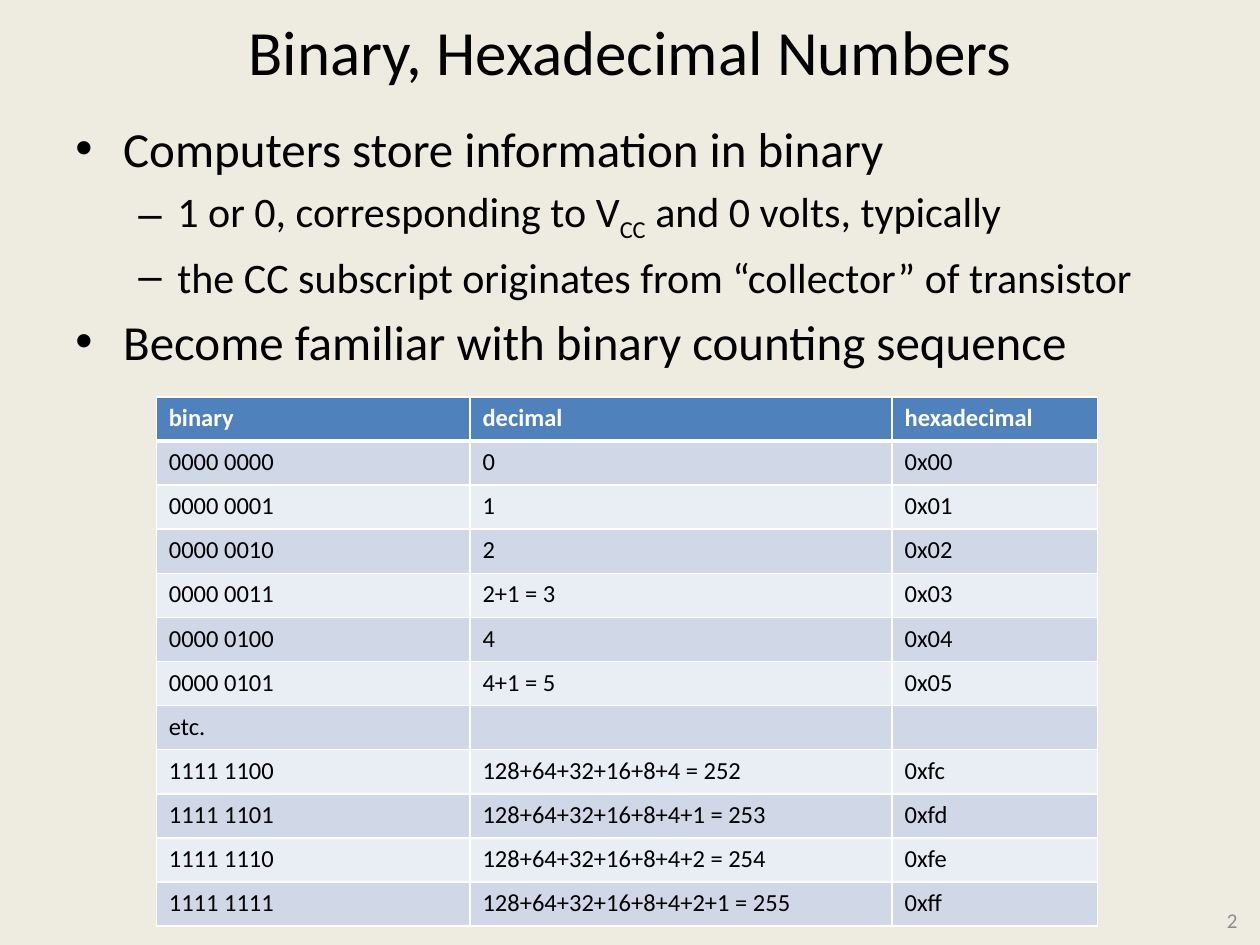
from lxml import etree
from pptx import Presentation
from pptx.dml.color import RGBColor
from pptx.enum.text import MSO_ANCHOR, PP_ALIGN
from pptx.oxml.ns import qn
from pptx.util import Inches, Pt

LEFT, CENTER, RIGHT = PP_ALIGN.LEFT, PP_ALIGN.CENTER, PP_ALIGN.RIGHT
TOP, MIDDLE = MSO_ANCHOR.TOP, MSO_ANCHOR.MIDDLE

FONT = "Calibri"
BLACK, WHITE, GREY = "000000", "FFFFFF", "8C8C8C"
PAPER, HEADER_BLUE = "EEECE1", "4F81BD"
BANDS = ("D0D8E8", "E9EDF4")

# Per outline level: bullet, text indent, hanging indent, text size
LEVELS = (("•", 0.38, 0.38, 28), ("–", 0.81, 0.31, 24))
# Each point is a level and its pieces of text; every second piece is a subscript
POINTS = (
    (0, ["Computers store information in binary"]),
    (1, ["1 or 0, corresponding to V", "CC", " and 0 volts, typically"]),
    (1, ["the CC subscript originates from “collector” of transistor"]),
    (0, ["Become familiar with binary counting sequence"]),
)
COLUMN_WIDTHS = (2.49, 3.35, 1.63)
ROW_HEIGHT = 0.35


def color(hex_code):
    return RGBColor.from_string(hex_code)


def style_span(span, size, hex_code, bold=False):
    span.font.name = FONT
    span.font.size = Pt(size)
    span.font.bold = bold
    span.font.color.rgb = color(hex_code)


def write_line(shape, text, size, hex_code, align):
    """Fill a shape with one vertically centred line."""
    frame = shape.text_frame
    frame.word_wrap = True
    frame.vertical_anchor = MIDDLE
    frame.text = text
    para = frame.paragraphs[0]
    para.alignment = align
    style_span(para.runs[0], size, hex_code)


def set_bullet(para, char, indent, hanging):
    props = para._p.get_or_add_pPr()
    props.set("marL", str(Inches(indent)))
    props.set("indent", str(-Inches(hanging)))
    etree.SubElement(props, qn("a:buFont"), typeface="Arial")
    etree.SubElement(props, qn("a:buChar"), char=char)


def add_title(page, box):
    title = page.shapes.title
    title.left, title.top, title.width, title.height = map(Inches, box)
    write_line(title, "Binary, Hexadecimal Numbers", 36, BLACK, CENTER)


def add_points(page, box):
    frame = page.shapes.add_textbox(*map(Inches, box)).text_frame
    frame.word_wrap = True
    frame.vertical_anchor = TOP
    for index, (level, pieces) in enumerate(POINTS):
        para = frame.add_paragraph() if index else frame.paragraphs[0]
        char, indent, hanging, size = LEVELS[level]
        para.level = level
        para.alignment = LEFT
        para.space_before = Pt(size * 0.2)
        set_bullet(para, char, indent, hanging)
        for position, piece in enumerate(pieces):
            span = para.add_run()
            span.text = piece
            style_span(span, size, BLACK)
            if position % 2:
                span.font._element.set("baseline", "-25000")


def number_row(number):
    """Return a number in binary, as a sum of powers of two, and in hexadecimal."""
    bits = f"{number:08b}"
    powers = [str(2 ** (7 - place)) for place, bit in enumerate(bits) if bit == "1"]
    decimal = f"{'+'.join(powers)} = {number}" if len(powers) > 1 else str(number)
    return f"{bits[:4]} {bits[4:]}", decimal, f"0x{number:02x}"


def set_borders(cell, top, bottom):
    """Draw white borders; top and bottom are widths in points."""
    props = cell._tc.get_or_add_tcPr()
    for side, width in (("L", 1), ("R", 1), ("T", top), ("B", bottom)):
        line = etree.SubElement(props, qn(f"a:ln{side}"), w=str(Pt(width)))
        fill = etree.SubElement(line, qn("a:solidFill"))
        etree.SubElement(fill, qn("a:srgbClr"), val=WHITE)


def style_cell(cell, text, row):
    header = row == 0
    set_borders(cell, 3 if row == 1 else 1, 3 if header else 1)
    cell.fill.solid()
    cell.fill.fore_color.rgb = color(HEADER_BLUE if header else BANDS[(row - 1) % 2])
    cell.text = text
    para = cell.text_frame.paragraphs[0]
    for span in para.runs:
        style_span(span, 14, WHITE if header else BLACK, header)
    if not text:
        etree.SubElement(para._p, qn("a:endParaRPr"), sz="1400")


def add_number_table(page, left, top):
    rows = [
        ("binary", "decimal", "hexadecimal"),
        *map(number_row, range(6)),
        ("etc.", "", ""),
        *map(number_row, range(252, 256)),
    ]
    box = (left, top, sum(COLUMN_WIDTHS), ROW_HEIGHT * len(rows))
    table = page.shapes.add_table(len(rows), len(COLUMN_WIDTHS), *map(Inches, box)).table
    for column, width in zip(table.columns, COLUMN_WIDTHS):
        column.width = Inches(width)
    for row, texts in enumerate(rows):
        table.rows[row].height = Inches(ROW_HEIGHT)
        for column, text in enumerate(texts):
            style_cell(table.cell(row, column), text, row)


def add_page_number(page, box):
    write_line(page.shapes.add_textbox(*map(Inches, box)), "2", 12, GREY, RIGHT)


def main():
    deck = Presentation()
    deck.slide_width, deck.slide_height = Inches(10), Inches(7.5)
    page = deck.slides.add_slide(deck.slide_layouts[5])
    page.background.fill.solid()
    page.background.fill.fore_color.rgb = color(PAPER)
    add_title(page, (0.5, 0, 9, 0.8))
    add_points(page, (0.5, 0.89, 9, 6.05))
    add_page_number(page, (7.59, 7.1, 2.33, 0.4))
    add_number_table(page, 1.24, 3.15)
    deck.save("out.pptx")


if __name__ == "__main__":
    main()
